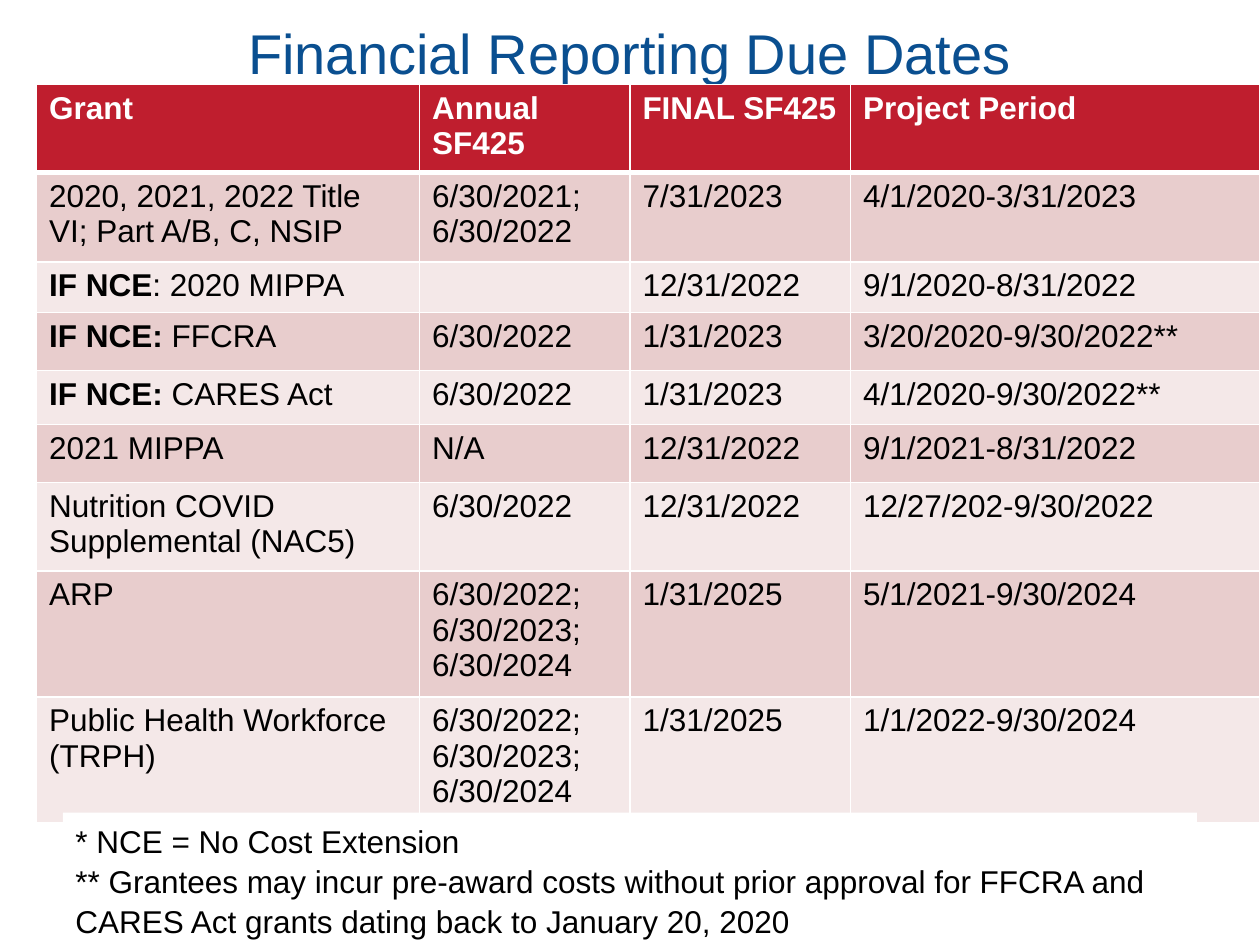
import dataclasses

import pptx
import pptx.dml.color
import pptx.enum.shapes
import pptx.enum.text
import pptx.oxml.ns
import pptx.util
from lxml import etree
from pptx.util import Inches


@dataclasses.dataclass(frozen=True)
class Theme:
    font: str = "Arial"
    title_size: int = 32
    body_size: int = 18
    title: str = "0A4F90"
    text: str = "000000"
    white: str = "FFFFFF"
    header: str = "BF1E2E"
    bands: tuple = ("E8CDCD", "F4E8E8")


THEME = Theme()

COLUMN_WIDTHS = [3.04, 1.67, 1.75, 3.25]
ROW_HEIGHTS = [0.58, 0.71, 0.38, 0.46, 0.43, 0.46, 0.46, 0.46, 0.46]
HEADINGS = ["Grant", "Annual SF425", "FINAL SF425", "Project Period"]
ARP_YEARS = "6/30/2022; 6/30/2023; 6/30/2024"

# Each grant is a bold lead-in and a plain name, followed by its dates
GRANTS = [
    (("", "2020, 2021, 2022 Title VI; Part A/B, C, NSIP"),
     "6/30/2021; 6/30/2022", "7/31/2023", "4/1/2020-3/31/2023"),
    (("IF NCE", ": 2020 MIPPA"), "", "12/31/2022", "9/1/2020-8/31/2022"),
    (("IF NCE: ", "FFCRA"), "6/30/2022", "1/31/2023", "3/20/2020-9/30/2022**"),
    (("IF NCE: ", "CARES Act"), "6/30/2022", "1/31/2023", "4/1/2020-9/30/2022**"),
    (("", "2021 MIPPA"), "N/A", "12/31/2022", "9/1/2021-8/31/2022"),
    (("", "Nutrition COVID Supplemental (NAC5)"),
     "6/30/2022", "12/31/2022", "12/27/202-9/30/2022"),
    (("", "ARP"), ARP_YEARS, "1/31/2025", "5/1/2021-9/30/2024"),
    (("", "Public Health Workforce (TRPH)"),
     ARP_YEARS, "1/31/2025", "1/1/2022-9/30/2024"),
]
FOOTNOTES = [
    "* NCE = No Cost Extension",
    "** Grantees may incur pre-award costs without prior approval for FFCRA and "
    "CARES Act grants dating back to January 20, 2020",
]


def rgb(value):
    return pptx.dml.color.RGBColor.from_string(value)


def add_run(paragraph, text, color, size=THEME.body_size, bold=False):
    run = paragraph.add_run()
    run.text = text
    run.font.name = THEME.font
    run.font.size = pptx.util.Pt(size)
    run.font.bold = bold
    run.font.color.rgb = rgb(color)


def set_borders(cell, bottom_width):
    properties = cell._tc.get_or_add_tcPr()
    widths = {"a:lnL": 1, "a:lnR": 1, "a:lnT": 1, "a:lnB": bottom_width}
    for position, (tag, width) in enumerate(widths.items()):
        line = etree.Element(pptx.oxml.ns.qn(tag), w=str(pptx.util.Pt(width)))
        fill = etree.SubElement(line, pptx.oxml.ns.qn("a:solidFill"))
        etree.SubElement(fill, pptx.oxml.ns.qn("a:srgbClr"), val=THEME.white)
        properties.insert(position, line)


def fill_cell(cell, runs, color, background, bottom_width=1):
    cell.fill.solid()
    cell.fill.fore_color.rgb = rgb(background)
    set_borders(cell, bottom_width)
    for text, bold in runs:
        if text:
            add_run(cell.text_frame.paragraphs[0], text, color, bold=bold)


def add_title(slide, left, top, width, height):
    title = slide.shapes.add_textbox(left, top, width, height).text_frame
    title.word_wrap = True
    title.vertical_anchor = pptx.enum.text.MSO_ANCHOR.MIDDLE
    heading = title.paragraphs[0]
    heading.alignment = pptx.enum.text.PP_ALIGN.CENTER
    add_run(heading, "Financial Reporting Due Dates", THEME.title, THEME.title_size)


def add_due_dates(slide, left, top, width, height):
    due_dates = slide.shapes.add_table(
        len(ROW_HEIGHTS), len(COLUMN_WIDTHS), left, top, width, height).table
    for column, column_width in zip(due_dates.columns, COLUMN_WIDTHS):
        column.width = Inches(column_width)
    for row, row_height in zip(due_dates.rows, ROW_HEIGHTS):
        row.height = Inches(row_height)

    # Header row
    for column, heading in enumerate(HEADINGS):
        fill_cell(due_dates.cell(0, column), [(heading, True)],
                  THEME.white, THEME.header, bottom_width=3)

    # Grant rows in alternating bands
    for index, ((lead, name), *dates) in enumerate(GRANTS):
        band = THEME.bands[index % 2]
        row_runs = [[(lead, True), (name, False)]] + [[(date, False)] for date in dates]
        for column, runs in enumerate(row_runs):
            fill_cell(due_dates.cell(index + 1, column), runs, THEME.text, band)


def add_footnotes(slide, left, top, width, height):
    panel = slide.shapes.add_shape(
        pptx.enum.shapes.MSO_SHAPE.RECTANGLE, left, top, width, height)
    panel.shadow.inherit = False
    panel.fill.solid()
    panel.fill.fore_color.rgb = rgb(THEME.white)
    panel.line.fill.background()
    notes = panel.text_frame
    notes.word_wrap = True
    notes.vertical_anchor = pptx.enum.text.MSO_ANCHOR.TOP
    for index, footnote in enumerate(FOOTNOTES):
        paragraph = notes.add_paragraph() if index else notes.paragraphs[0]
        paragraph.alignment = pptx.enum.text.PP_ALIGN.LEFT
        paragraph.line_spacing = 1.07
        add_run(paragraph, footnote, THEME.text)


def main():
    deck = pptx.Presentation()
    deck.slide_width, deck.slide_height = Inches(10), Inches(7.5)
    slide = deck.slides.add_slide(deck.slide_layouts[6])
    add_title(slide, Inches(0.5), Inches(-0.01), Inches(9), Inches(0.84))
    add_due_dates(slide, Inches(0.29), Inches(0.67), Inches(9.71), Inches(5.87))
    add_footnotes(slide, Inches(0.5), Inches(6.45), Inches(9), Inches(1.01))
    deck.save("out.pptx")


if __name__ == "__main__":
    main()
